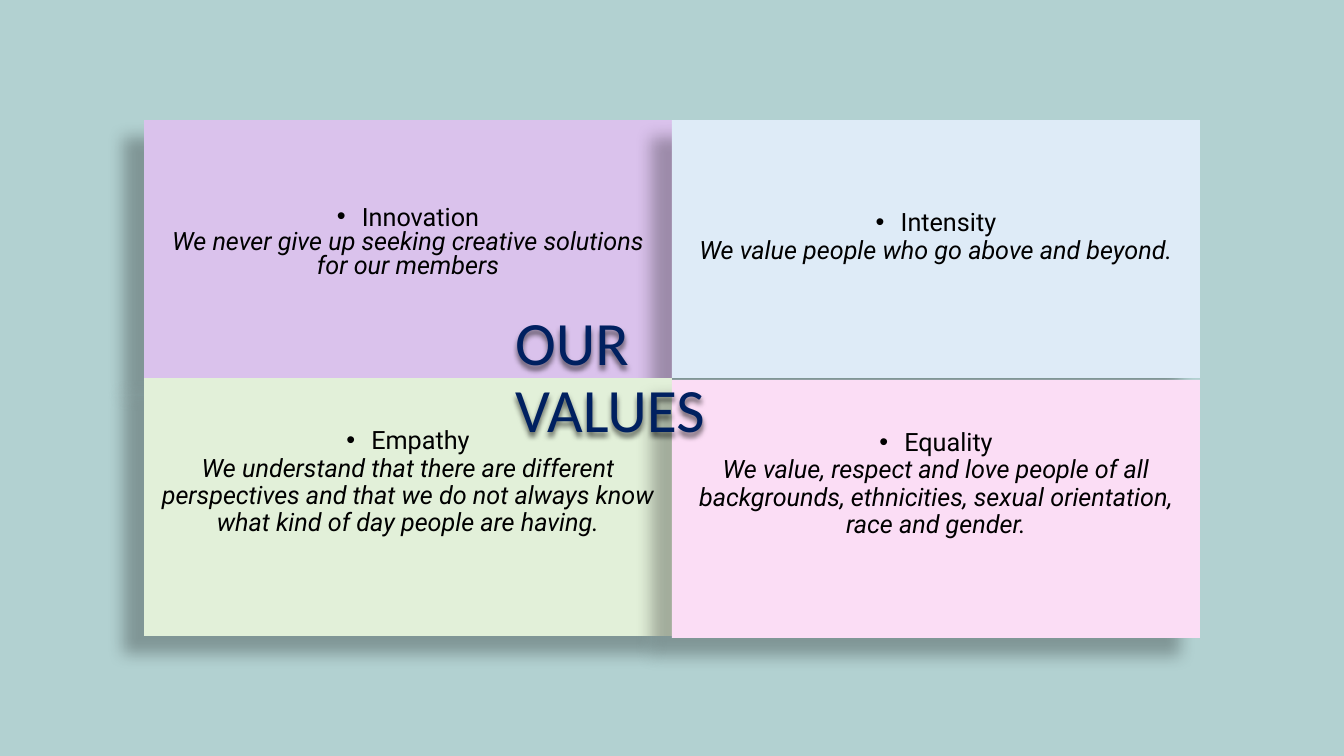
from lxml.etree import SubElement
from pptx import Presentation
from pptx.dml.color import RGBColor
from pptx.enum.shapes import MSO_SHAPE
from pptx.enum.text import MSO_ANCHOR, MSO_AUTO_SIZE, PP_ALIGN
from pptx.oxml.ns import qn
from pptx.util import Emu, Pt

EMU_PER_PX = 914400 / 100.8
BACKGROUND = RGBColor(0xB2, 0xD1, 0xD1)
LILAC = RGBColor(0xDA, 0xC2, 0xEC)
PALE_BLUE = RGBColor(0xDE, 0xEB, 0xF7)
PALE_GREEN = RGBColor(0xE2, 0xF0, 0xD9)
PINK = RGBColor(0xFB, 0xDD, 0xF5)
BLACK = RGBColor(0, 0, 0)
NAVY = RGBColor(0x00, 0x20, 0x60)

CARD_WIDTH, CARD_HEIGHT = 528, 258
# left, top, fill, space above the text, line spacing, value, meaning
CARDS = [
    (144, 120, LILAC, 87, 0.8, "Innovation",
     "We never give up seeking creative solutions for our members"),
    (672, 120, PALE_BLUE, 90, 0.9, "Intensity",
     "We value people who go above and beyond."),
    (144, 378, PALE_GREEN, 50, 0.9, "Empathy",
     "We understand that there are different perspectives and that we do not "
     "always know what kind of day people are having."),
    (672, 380, PINK, 50, 0.9, "Equality",
     "We value, respect and love people of all backgrounds, ethnicities, "
     "sexual orientation, race and gender."),
]


def px(length):
    return Emu(round(length * EMU_PER_PX))


def place(shape, left, top, width, height):
    shape.left, shape.top = px(left), px(top)
    shape.width, shape.height = px(width), px(height)


def add_shadow(shape, blur, distance, angle, opacity):
    shape.shadow.inherit = False
    effects = shape.element.spPr.find(qn("a:effectLst"))
    shadow = SubElement(effects, qn("a:outerShdw"), blurRad=str(Pt(blur)),
                        dist=str(Pt(distance)), dir=str(angle * 60000),
                        algn="tl", rotWithShape="0")
    color = SubElement(shadow, qn("a:srgbClr"), val=str(BLACK))
    SubElement(color, qn("a:alpha"), val=str(opacity * 1000))


def set_bullet(para, bullet):
    properties = para._p.get_or_add_pPr()
    indent = px(25) if bullet else 0
    properties.set("marL", str(indent))
    properties.set("indent", str(-indent))
    if bullet:
        SubElement(properties, qn("a:buFont"), typeface="Arial")
        SubElement(properties, qn("a:buChar"), char="•")
    else:
        SubElement(properties, qn("a:buNone"))


def format_card(card, fill, space_above, line_spacing, value, meaning):
    card.fill.solid()
    card.fill.fore_color.rgb = fill
    card.line.fill.background()
    add_shadow(card, blur=11.8, distance=19.7, angle=141, opacity=28)

    frame = card.text_frame
    frame.text = f"{value}\n{meaning}"
    frame.word_wrap = True
    frame.auto_size = MSO_AUTO_SIZE.NONE
    frame.vertical_anchor = MSO_ANCHOR.TOP
    frame.margin_top = px(space_above)
    for para, is_value in zip(frame.paragraphs, (True, False)):
        para.alignment = PP_ALIGN.CENTER
        para.line_spacing = line_spacing
        para.space_before = Pt(0)
        set_bullet(para, is_value)
        for span in para.runs:
            span.font.name = "Roboto"
            span.font.size = Pt(18)
            span.font.italic = not is_value
            span.font.color.rgb = BLACK


def format_title(title):
    place(title, 505, 306, 334, 146)
    add_shadow(title, blur=4, distance=3, angle=90, opacity=60)
    frame = title.text_frame
    frame.text = "OUR VALUES"
    frame.word_wrap = True
    frame.auto_size = MSO_AUTO_SIZE.NONE
    frame.vertical_anchor = MSO_ANCHOR.MIDDLE
    para = frame.paragraphs[0]
    para.alignment = PP_ALIGN.LEFT
    para.line_spacing = 0.9
    font = para.runs[0].font
    font.name, font.size = "Calibri", Pt(44)
    font.color.rgb = NAVY


def main():
    deck = Presentation()
    deck.slide_width, deck.slide_height = px(1344), px(756)
    page = deck.slides.add_slide(deck.slide_layouts[1])
    page.background.fill.solid()
    page.background.fill.fore_color.rgb = BACKGROUND

    # Value cards, the first one in the body placeholder
    for number, (left, top, *content) in enumerate(CARDS):
        if number == 0:
            card = page.placeholders[1]
        else:
            card = page.shapes.add_shape(MSO_SHAPE.RECTANGLE, 0, 0, 0, 0)
        place(card, left, top, CARD_WIDTH, CARD_HEIGHT)
        format_card(card, *content)

    # Title, brought in front of the cards
    title = page.shapes.title
    format_title(title)
    title.element.getparent().append(title.element)

    deck.save("out.pptx")


if __name__ == "__main__":
    main()
